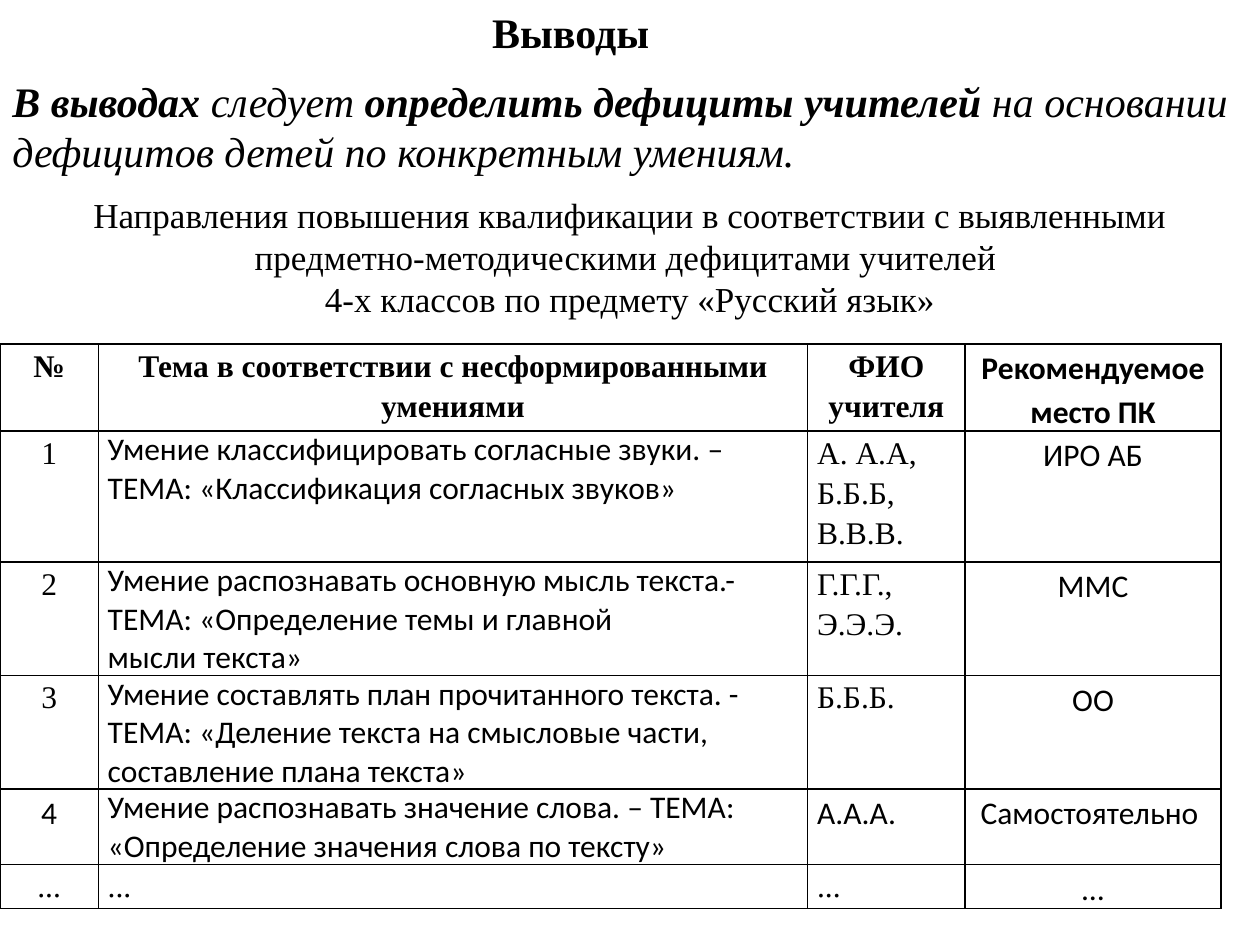
from lxml import etree
from pptx import Presentation
from pptx.dml.color import RGBColor
from pptx.enum.text import MSO_ANCHOR, MSO_AUTO_SIZE, PP_ALIGN
from pptx.oxml.ns import qn
from pptx.util import Pt

LEFT, MID = PP_ALIGN.LEFT, PP_ALIGN.CENTER
TOP, CENTER = MSO_ANCHOR.TOP, MSO_ANCHOR.MIDDLE
GROW = MSO_AUTO_SIZE.SHAPE_TO_FIT_TEXT
COLORS = {"ink": "000000", "paper": "FFFFFF"}
SERIF, SANS = "Times New Roman", "Calibri"

COLS = [56.16, 405.36, 90, 146.16]
ROWS = [49.68, 74.88, 64.8, 64.8, 43.2, 25.2]
TOPIC, PLACE = 1, 3
HEAD, LAST, SANS_ROW = 0, 5, 4
CELLS = [
    ["№", "Тема в соответствии с несформированными умениями",
     "ФИО учителя", "Рекомендуемое место ПК"],
    ["1", "Умение классифицировать согласные звуки. – ТЕМА: "
     "«Классификация согласных звуков»",
     "А. А.А,\nБ.Б.Б,\nВ.В.В.", "ИРО АБ"],
    ["2", "Умение распознавать основную мысль текста.- ТЕМА: "
     "«Определение темы и главной\nмысли текста»",
     "Г.Г.Г.,\nЭ.Э.Э.", "ММС"],
    ["3", "Умение составлять план прочитанного текста. - ТЕМА: "
     "«Деление текста на смысловые части, составление плана текста»",
     "Б.Б.Б.", "ОО"],
    ["4", "Умение распознавать значение слова. – ТЕМА: "
     "«Определение значения слова по тексту»",
     "А.А.А.", "Самостоятельно "],
    ["...", "...", "...", "…"],
]


class Page:
    def __init__(self, deck):
        self.slide = deck.slides.add_slide(deck.slide_layouts[5])

    def style(self, para, size, font=SERIF, align=LEFT, bold=False,
              italic=False, space=1.0):
        para.alignment = align
        para.line_spacing = space
        para.space_before = para.space_after = Pt(0)
        face = para.font
        face.name, face.size = font, Pt(size)
        face.bold, face.italic = bold, italic
        face.color.rgb = RGBColor.from_string(COLORS["ink"])

    def place(self, shape, box, anchor):
        shape.left, shape.top, shape.width, shape.height = map(Pt, box)
        frame = shape.text_frame
        frame.word_wrap = True
        frame.auto_size = GROW
        frame.vertical_anchor = anchor
        return frame

    def title(self, text, box):
        frame = self.place(self.slide.shapes.title, box, CENTER)
        frame.text = text
        self.style(frame.paragraphs[0], 24, align=MID, bold=True)

    def text(self, lines, box, size, anchor=TOP, **look):
        """Each line is a list of (words, bold) runs."""
        shape = self.slide.shapes.add_textbox(*map(Pt, box))
        frame = self.place(shape, box, anchor)
        for i, runs in enumerate(lines):
            para = frame.add_paragraph() if i else frame.paragraphs[0]
            self.style(para, size, **look)
            for words, bold in runs:
                run = para.add_run()
                run.text = words
                if bold:
                    run.font.bold = True

    def border(self, cell):
        props = cell._tc.get_or_add_tcPr()
        for i, side in enumerate(("lnL", "lnR", "lnT", "lnB")):
            line = etree.Element(qn("a:" + side), w=str(Pt(1)))
            fill = etree.SubElement(line, qn("a:solidFill"))
            etree.SubElement(fill, qn("a:srgbClr"), val=COLORS["ink"])
            props.insert(i, line)

    def cell(self, cell, text, **look):
        cell.margin_left = cell.margin_right = Pt(5.4)
        cell.margin_top = cell.margin_bottom = 0
        cell.fill.solid()
        cell.fill.fore_color.rgb = RGBColor.from_string(COLORS["paper"])
        self.border(cell)
        cell.text = text
        for para in cell.text_frame.paragraphs:
            self.style(para, 18, **look)

    def table(self, left, top):
        shape = self.slide.shapes.add_table(
            len(ROWS), len(COLS), Pt(left), Pt(top),
            Pt(sum(COLS)), Pt(sum(ROWS)))
        grid = shape.table
        for col, width in zip(grid.columns, COLS):
            col.width = Pt(width)
        for row, height in zip(grid.rows, ROWS):
            row.height = Pt(height)
        for r, row in enumerate(CELLS):
            for c, text in enumerate(row):
                topic = c == TOPIC and HEAD < r < LAST
                sans = topic or c == PLACE or r == SANS_ROW
                mid = r == HEAD or c in (0, PLACE)
                self.cell(grid.cell(r, c), text,
                          font=SANS if sans else SERIF,
                          align=MID if mid else LEFT,
                          bold=r == HEAD,
                          space=1.0 if topic else 1.15)


def main():
    deck = Presentation()
    deck.slide_width, deck.slide_height = Pt(720), Pt(540)
    page = Page(deck)
    page.title("Выводы", (180, 0, 292.32, 36.72))
    page.text([[("В выводах ", True), ("следует ", False),
                ("определить дефициты учителей ", True),
                ("на основании дефицитов детей по конкретным умениям.",
                 False)]],
              (0, 39.6, 720, 65.52), 24, italic=True)
    page.text([[("Направления повышения квалификации в соответствии с "
                 "выявленными предметно-методическими дефицитами учителей ",
                 False)],
               [("4-х классов по предмету «Русский язык»", False)]],
              (0, 106.56, 720, 79.92), 20, CENTER, align=MID)
    page.table(0, 196.56)
    deck.save("out.pptx")


if __name__ == "__main__":
    main()
